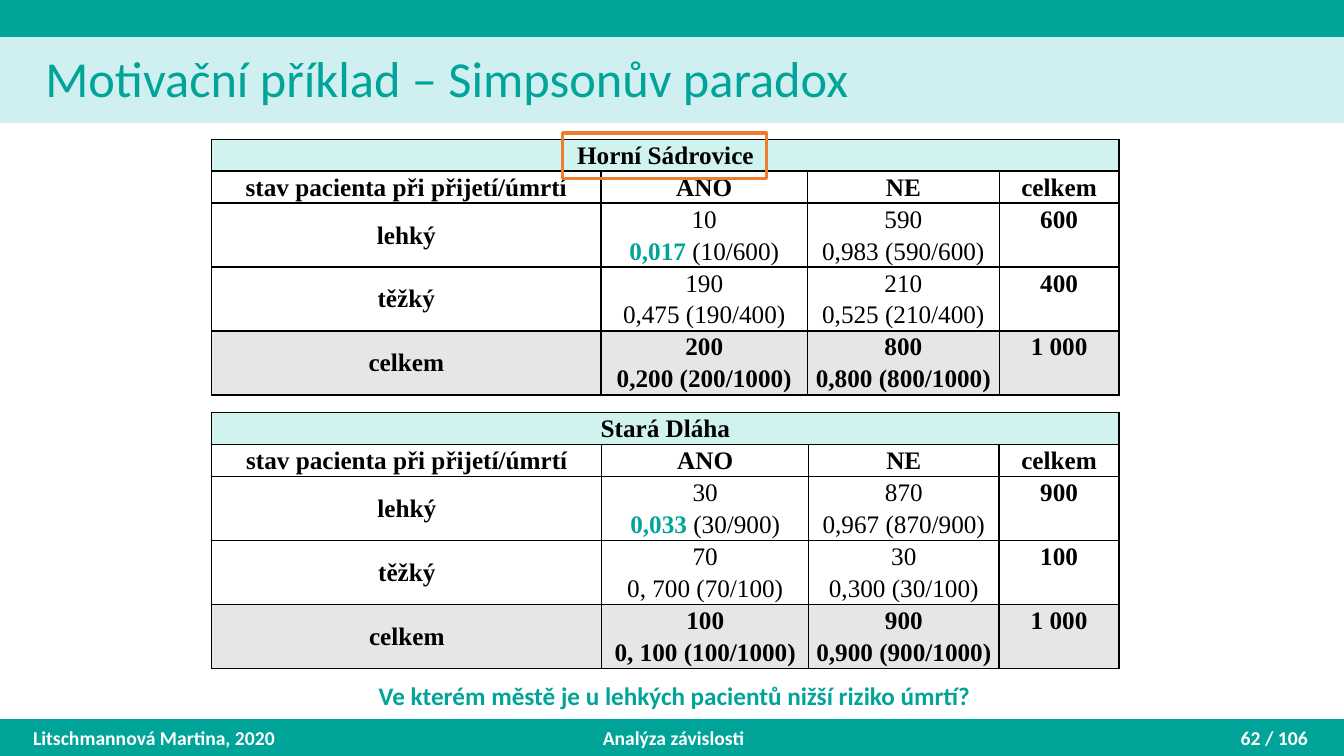
from lxml.etree import SubElement
from pptx import Presentation
from pptx.dml.color import RGBColor
from pptx.enum.shapes import MSO_SHAPE
from pptx.enum.text import MSO_ANCHOR, PP_ALIGN
from pptx.oxml.ns import qn
from pptx.util import Inches, Pt

WIDTH, HEIGHT = 13.33, 7.5
BAND = 0.36
FOOTER_TOP = HEIGHT - BAND
TABLE_LEFT, TABLE_WIDTH, TABLE_HEIGHT = 2.1, 9, 2.54
TABLE_LINE_SPACING = 1.03
COLORS = {
    "teal": "00A499", "pale": "D0EFF0", "town": "D1F3EF", "total": "E7E6E6",
    "orange": "ED7D31", "black": "000000", "white": "FFFFFF",
}
HEADINGS = ["stav pacienta při přijetí/úmrtí", "ANO", "NE", "celkem"]
# Each state: label, (deaths, share), (survivals, share), total
HORNI = [
    ("lehký", ("10", "0,017 (10/600)"), ("590", "0,983 (590/600)"), "600"),
    ("těžký", ("190", "0,475 (190/400)"), ("210", "0,525 (210/400)"), "400"),
    ("celkem", ("200", "0,200 (200/1000)"), ("800", "0,800 (800/1000)"), "1 000"),
]
STARA = [
    ("lehký", ("30", "0,033 (30/900)"), ("870", "0,967 (870/900)"), "900"),
    ("těžký", ("70", "0, 700 (70/100)"), ("30", "0,300 (30/100)"), "100"),
    ("celkem", ("100", "0, 100 (100/1000)"), ("900", "0,900 (900/1000)"), "1 000"),
]


def rgb(name):
    return RGBColor.from_string(COLORS[name])


def apply(target, formats):
    for attribute, value in formats.items():
        setattr(target, attribute, value)


def style_font(font, size, color, bold=False, name="Calibri"):
    apply(font, {"size": Pt(size), "bold": bold, "name": name})
    font.color.rgb = rgb(color)


def add_box(slide, place, line, width, fill=None):
    box = slide.shapes.add_shape(MSO_SHAPE.RECTANGLE, *map(Inches, place))
    box.shadow.inherit = False
    if fill:
        box.fill.solid()
        box.fill.fore_color.rgb = rgb(fill)
    else:
        box.fill.background()
    box.line.color.rgb = rgb(line)
    box.line.width = Pt(width)
    return box


def add_label(slide, place, text, size, color, align, anchor=MSO_ANCHOR.MIDDLE):
    frame = slide.shapes.add_textbox(*map(Inches, place)).text_frame
    apply(frame, {"word_wrap": True, "vertical_anchor": anchor})
    paragraph = frame.paragraphs[0]
    paragraph.alignment = align
    run = paragraph.add_run()
    run.text = text
    style_font(run.font, size, color, bold=True)


def add_title(slide, text):
    title = slide.shapes.title
    apply(title, dict(zip(("left", "top", "width", "height"),
                          map(Inches, (0.35, 0.4, 11.88, 0.81)))))
    frame = title.text_frame
    apply(frame, {"text": text, "word_wrap": True, "vertical_anchor": MSO_ANCHOR.MIDDLE})
    paragraph = frame.paragraphs[0]
    apply(paragraph, {"alignment": PP_ALIGN.LEFT, "line_spacing": 0.9})
    style_font(paragraph.runs[0].font, 36, "teal")


def add_bands(slide):
    """Put the bands behind the title."""
    for place, color, width in [
        ((0, FOOTER_TOP, WIDTH, BAND), "teal", 1),
        ((0.01, BAND, WIDTH, 0.86), "pale", 0.75),
        ((0, 0, WIDTH, BAND), "teal", 1),
    ]:
        band = add_box(slide, place, color, width, color)
        slide.shapes.title.element.addprevious(band.element)


def set_borders(cell, hidden):
    properties = cell._tc.get_or_add_tcPr()
    for side in ("lnL", "lnR", "lnT", "lnB"):
        border = SubElement(properties, qn(f"a:{side}"), w=str(Pt(1)))
        if side == hidden:
            SubElement(border, qn("a:noFill"))
        else:
            fill = SubElement(border, qn("a:solidFill"))
            SubElement(fill, qn("a:srgbClr"), val=COLORS["black"])


def fill_cell(cell, text, bold=True, fill=None, hidden=None, highlight=False):
    """Write and format a cell; highlight colours the first word."""
    set_borders(cell, hidden)
    if fill:
        cell.fill.solid()
        cell.fill.fore_color.rgb = rgb(fill)
    else:
        cell.fill.background()
    apply(cell, {
        "margin_left": Inches(0.05), "margin_right": Inches(0.05),
        "margin_top": 0, "margin_bottom": 0, "vertical_anchor": MSO_ANCHOR.MIDDLE,
    })
    paragraph = cell.text_frame.paragraphs[0]
    if not text:
        SubElement(paragraph._p, qn("a:endParaRPr"), sz="1200")
        return
    apply(paragraph, {"alignment": PP_ALIGN.CENTER, "line_spacing": TABLE_LINE_SPACING})
    parts = [(text, "black", bold)]
    if highlight:
        share, space, ratio = text.partition(" ")
        parts = [(share, "teal", True), (space + ratio, "black", bold)]
    for part, color, heavy in parts:
        run = paragraph.add_run()
        run.text = part
        style_font(run.font, 18, color, heavy, "Times New Roman")


def add_town_table(slide, top, town, states, widths):
    count = 2 + 2 * len(states)
    table = slide.shapes.add_table(
        count, len(widths), *map(Inches, (TABLE_LEFT, top, TABLE_WIDTH, TABLE_HEIGHT))).table
    apply(table, {"first_row": False, "horz_banding": False})
    for column, width in zip(table.columns, widths):
        column.width = Inches(width)
    for row in table.rows:
        row.height = Inches(TABLE_HEIGHT / count)

    for column, heading in enumerate(HEADINGS):
        fill_cell(table.cell(0, column), "" if column else town, fill="town")
        fill_cell(table.cell(1, column), heading)
    table.cell(0, 0).merge(table.cell(0, len(widths) - 1))

    for index, (state, died, survived, total) in enumerate(states):
        first = 2 + 2 * index
        is_total = index == len(states) - 1
        lines = zip((state, ""), died, survived, (total, ""))
        for offset, line in enumerate(lines):
            for column, text in enumerate(line):
                fill_cell(
                    table.cell(first + offset, column), text,
                    bold=is_total or column in (0, 3),
                    fill="total" if is_total else None,
                    hidden=("lnB", "lnT")[offset] if column else None,
                    highlight=(index, offset, column) == (0, 1, 1))
        table.cell(first, 0).merge(table.cell(first + 1, 0))


def main():
    presentation = Presentation()
    apply(presentation, {"slide_width": Inches(WIDTH), "slide_height": Inches(HEIGHT)})
    slide = presentation.slides.add_slide(presentation.slide_layouts[5])
    add_title(slide, "Motivační příklad – Simpsonův paradox")
    add_bands(slide)
    for left, width, text, align in [
        (0.23, 3, "Litschmannová Martina, 2020", PP_ALIGN.LEFT),
        (4.43, 4.5, "Analýza závislosti", PP_ALIGN.CENTER),
        (10.07, 3, "62 / 106", PP_ALIGN.RIGHT),
    ]:
        add_label(slide, (left, FOOTER_TOP, width, BAND), text, 14, "white", align)
    add_town_table(slide, 1.38, "Horní Sádrovice", HORNI, (3.86, 2.05, 1.9, 1.19))
    add_town_table(slide, 4.09, "Stará Dláha", STARA, (3.87, 2.05, 1.89, 1.19))
    add_label(slide, (2.23, 6.7, 8.98, 0.4),
              "Ve kterém městě je u lehkých pacientů nižší riziko úmrtí? ",
              18, "teal", PP_ALIGN.CENTER, MSO_ANCHOR.TOP)
    add_box(slide, (5.58, 1.32, 2.02, 0.45), "orange", 2.25)
    presentation.save("out.pptx")


if __name__ == "__main__":
    main()
